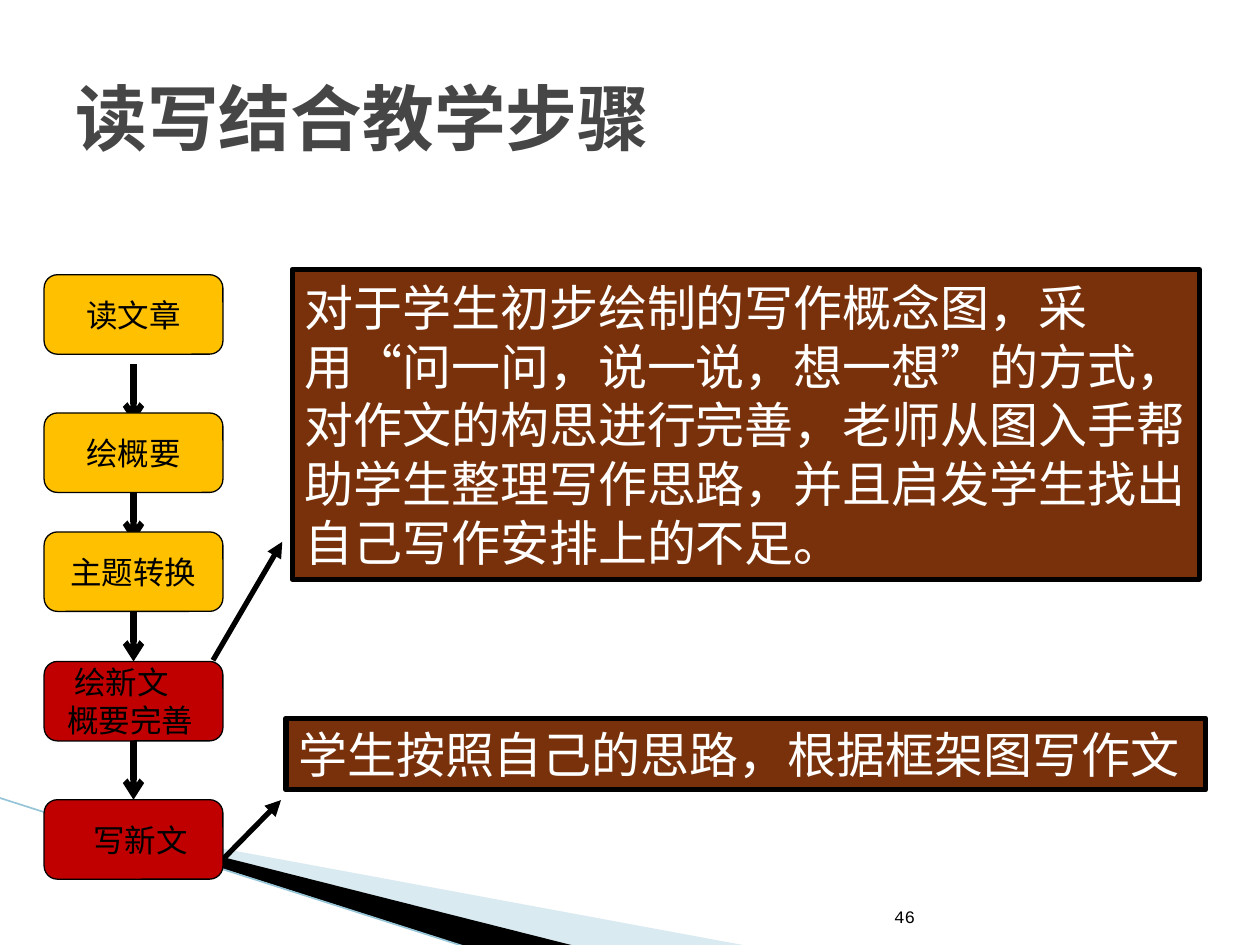
from dataclasses import dataclass

from lxml.etree import SubElement
from pptx import Presentation
from pptx.dml.color import RGBColor
from pptx.enum.shapes import MSO_CONNECTOR as CONN, MSO_SHAPE as SHAPE
from pptx.enum.text import MSO_ANCHOR as ANCHOR, PP_ALIGN as ALIGN
from pptx.oxml.ns import qn
from pptx.util import Pt

SANS, MONO = "Noto Sans CJK SC", "Courier New"
BLACK, WHITE, GOLD, RED, BROWN = "000000", "FFFFFF", "FFC000", "C00000", "78310B"
STEP_X, STEP_W, STEP_H = 25.2, 102.2, 45.4
ARROW_LEN = 34


@dataclass
class Line:
    text: str
    indent: float = 0
    align: ALIGN = ALIGN.CENTER


@dataclass
class Step:
    top: float
    fill: str
    lines: list[Line]


@dataclass
class Note:
    left: float
    top: float
    width: float
    height: float
    text: str
    wrap: bool


@dataclass
class Arrow:
    x1: float
    y1: float
    x2: float
    y2: float
    weight: float = 3
    head: str = "triangle"
    color: str = BLACK


STEPS = [
    Step(157, GOLD, [Line("读文章")]),
    Step(236, GOLD, [Line("绘概要")]),
    Step(304, GOLD, [Line("主题转换")]),
    Step(378, RED, [Line("绘新文", 8, ALIGN.LEFT), Line("概要完善", 4, ALIGN.LEFT)]),
    Step(457, RED, [Line("写新文", 8)]),
]
NOTES = [
    Note(167, 154, 518.4, 177,
         "对于学生初步绘制的写作概念图，采用“问一问，说一说，想一想”的方式，"
         "对作文的构思进行完善，老师从图入手帮助学生整理写作思路，"
         "并且启发学生找出自己写作安排上的不足。", True),
    Note(163.4, 410.4, 525.6, 41, "学生按照自己的思路，根据框架图写作文", False),
]
NOTE_ARROWS = [Arrow(121.7, 377.3, 161.3, 309.6), Arrow(127.4, 491, 160.6, 457.2)]
STEP_ARROW_STARTS = [208, 275.6, 344, 423]


def rgb(color: str) -> RGBColor:
    return RGBColor.from_string(color)


def add_run(p, text: str, size: float, color: str, font: str = SANS, bold: bool = False) -> None:
    r = p.add_run()
    r.text = text
    r.font.size, r.font.bold, r.font.name = Pt(size), bold, font
    r.font.color.rgb = rgb(color)
    rPr = r.font._element
    rPr.set("lang", "zh-CN")
    SubElement(rPr, qn("a:ea")).set("typeface", SANS)


def fill_text(tf, lines: list[Line], size: float, color: str) -> None:
    tf.vertical_anchor = ANCHOR.MIDDLE
    for i, line in enumerate(lines):
        p = tf.add_paragraph() if i else tf.paragraphs[0]
        p.alignment = line.align
        p.line_spacing = Pt(size * 1.2)
        if line.indent:
            p._p.get_or_add_pPr().set("marL", str(Pt(line.indent)))
        add_run(p, line.text, size, color)


def add_box(s, kind: SHAPE, left: float, top: float, width: float, height: float,
            fill: str, weight: float):
    sp = s.shapes.add_shape(kind, Pt(left), Pt(top), Pt(width), Pt(height))
    sp.shadow.inherit = False
    sp.fill.solid()
    sp.fill.fore_color.rgb = rgb(fill)
    sp.line.color.rgb = rgb(BLACK)
    sp.line.width = Pt(weight)
    sp.text_frame.word_wrap = True
    return sp


def add_line(s, a: Arrow) -> None:
    cn = s.shapes.add_connector(CONN.STRAIGHT, Pt(a.x1), Pt(a.y1), Pt(a.x2), Pt(a.y2))
    cn.line.color.rgb = rgb(a.color)
    cn.line.width = Pt(a.weight)
    if a.head:
        SubElement(cn.line._get_or_add_ln(), qn("a:tailEnd")).set("type", a.head)
    SubElement(cn._element.spPr, qn("a:effectLst"))


def add_wedge(s, points: list[tuple[float, float]], color: str, alpha: int = 100) -> None:
    fb = s.shapes.build_freeform(Pt(points[0][0]), Pt(points[0][1]), scale=1.0)
    fb.add_line_segments([(Pt(x), Pt(y)) for x, y in points[1:]], close=True)
    sp = fb.convert_to_shape()
    sp.shadow.inherit = False
    sp.fill.solid()
    sp.fill.fore_color.rgb = rgb(color)
    sp.line.fill.background()
    if alpha < 100:
        clr = sp._element.spPr.find(qn("a:solidFill"))[0]
        SubElement(clr, qn("a:alpha")).set("val", str(alpha * 1000))


def add_label(s, left: float, top: float, width: float, height: float,
              anchor: ANCHOR, align: ALIGN):
    tf = s.shapes.add_textbox(Pt(left), Pt(top), Pt(width), Pt(height)).text_frame
    tf.word_wrap = True
    tf.vertical_anchor = anchor
    tf.paragraphs[0].alignment = align
    return tf.paragraphs[0]


def main() -> None:
    prs = Presentation()
    prs.slide_width, prs.slide_height = Pt(720), Pt(540)
    s = prs.slides.add_slide(prs.slide_layouts[6])

    # Corner decoration
    add_wedge(s, [(39.6, 468.7), (428.4, 540.7), (328.3, 540.7), (39.6, 468)], "A0CBDC", 40)
    add_wedge(s, [(38.2, 467.3), (329, 540.7), (267.8, 541.4), (38.9, 468)], BLACK)
    add_line(s, Arrow(-0.7, 455.8, 267.1, 541.4, 0.95, "", "97C5D8"))

    # Title
    p = add_label(s, 36, 21.6, 648, 90, ANCHOR.MIDDLE, ALIGN.LEFT)
    add_run(p, "读写结合教学步骤", 41, "464646", MONO, True)

    # Explanations beside the last two steps
    for n in NOTES:
        sp = add_box(s, SHAPE.RECTANGLE, n.left, n.top, n.width, n.height, BROWN, 3)
        sp.text_frame.word_wrap = n.wrap
        fill_text(sp.text_frame, [Line(n.text, align=ALIGN.LEFT)], 28, WHITE)
    for a in NOTE_ARROWS:
        add_line(s, a)

    # Step chain, boxes above the arrows
    mid = STEP_X + STEP_W / 2
    for y in STEP_ARROW_STARTS:
        add_line(s, Arrow(mid, y, mid, y + ARROW_LEN, 3.5, "arrow"))
    for step in STEPS:
        sp = add_box(s, SHAPE.ROUNDED_RECTANGLE, STEP_X, step.top, STEP_W, STEP_H,
                     step.fill, 0.75)
        fill_text(sp.text_frame, step.lines, 18, BLACK)

    # Page number
    p = add_label(s, 345, 504.7, 185, 28.8, ANCHOR.BOTTOM, ALIGN.RIGHT)
    add_run(p, "46", 10, BLACK, MONO)

    prs.save("out.pptx")


if __name__ == "__main__":
    main()
